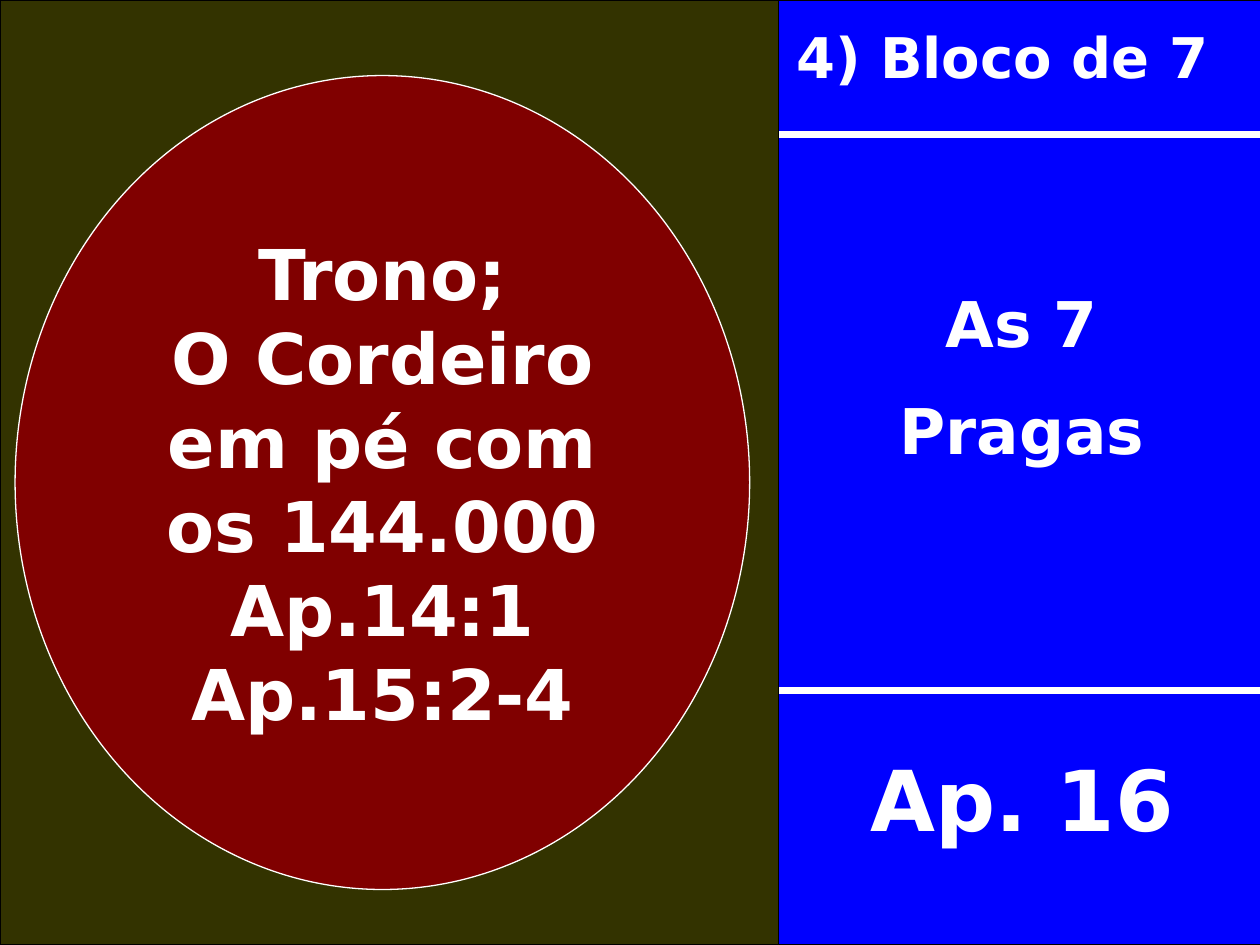
from lxml import etree
from pptx import Presentation, util as u
from pptx.dml.color import RGBColor
from pptx.enum import shapes, text
from pptx.oxml.ns import qn

WHITE = RGBColor(255, 255, 255)
BLACK = RGBColor(0, 0, 0)
BLUE = RGBColor(0, 0, 255)
OLIVE = RGBColor(0x33, 0x33, 0)
MAROON = RGBColor(0x80, 0, 0)
FONT = "DejaVu Sans"
WIDTH, HEIGHT = 10, 7.5
SPLIT, PANEL_RIGHT = 6.18, 10.04
LEFT, CENTER = text.PP_ALIGN.LEFT, text.PP_ALIGN.CENTER

THRONE = ["Trono;", "O Cordeiro", "em pé com", "os 144.000", "Ap.14:1", "Ap.15:2-4"]
PANEL_TEXTS = [
    (["4) Bloco de 7"], 32, LEFT, (6.22, 0.13, 3.74, 0.63)),
    (["As 7", "Pragas"], 36, CENTER, (6.34, 2.21, 3.54, 1.6)),
    (["Ap. 16"], 48, CENTER, (6.5, 5.88, 3.23, 0.9)),
]
DIVIDERS = [1.07, 5.48]


def write(frame, lines, size, align, gap=0):
    for index, line in enumerate(lines):
        paragraph = frame.add_paragraph() if index else frame.paragraphs[0]
        paragraph.text = line
        paragraph.alignment = align
        if index:
            paragraph.space_before = u.Pt(gap)
        font = paragraph.font
        font.name, font.size, font.bold = FONT, u.Pt(size), True
        font.color.rgb = WHITE


def add_shape(slide, kind, box, fill, line):
    shape = slide.shapes.add_shape(kind, *map(u.Inches, box))
    shape.shadow.inherit = False
    shape.fill.solid()
    shape.fill.fore_color.rgb = fill
    shape.line.color.rgb = line
    shape.line.width = u.Pt(0.75)
    return shape


def add_divider(slide, y):
    divider = slide.shapes.add_connector(
        shapes.MSO_CONNECTOR.STRAIGHT,
        *map(u.Inches, (SPLIT, y, PANEL_RIGHT, y)))
    divider.line.color.rgb = WHITE
    divider.line.width = u.Pt(4)
    etree.SubElement(divider._element.spPr, qn("a:effectLst"))


def main():
    presentation = Presentation()
    presentation.slide_width = u.Inches(WIDTH)
    presentation.slide_height = u.Inches(HEIGHT)
    slide = presentation.slides.add_slide(presentation.slide_layouts[6])
    rectangle, oval = shapes.MSO_SHAPE.RECTANGLE, shapes.MSO_SHAPE.OVAL

    add_shape(slide, rectangle, (SPLIT, 0, PANEL_RIGHT - SPLIT, HEIGHT), BLUE, BLACK)
    for y in DIVIDERS:
        add_divider(slide, y)
    add_shape(slide, rectangle, (0, 0, SPLIT, HEIGHT), OLIVE, BLACK)

    throne = add_shape(slide, oval, (0.12, 0.6, 5.83, 6.46), MAROON, WHITE)
    throne.text_frame.word_wrap = False
    throne.text_frame.vertical_anchor = text.MSO_ANCHOR.MIDDLE
    write(throne.text_frame, THRONE, 40, CENTER)

    for lines, size, align, box in PANEL_TEXTS:
        frame = slide.shapes.add_textbox(*map(u.Inches, box)).text_frame
        frame.word_wrap = True
        frame.auto_size = text.MSO_AUTO_SIZE.SHAPE_TO_FIT_TEXT
        write(frame, lines, size, align, gap=size / 2)

    presentation.save("out.pptx")


if __name__ == "__main__":
    main()
